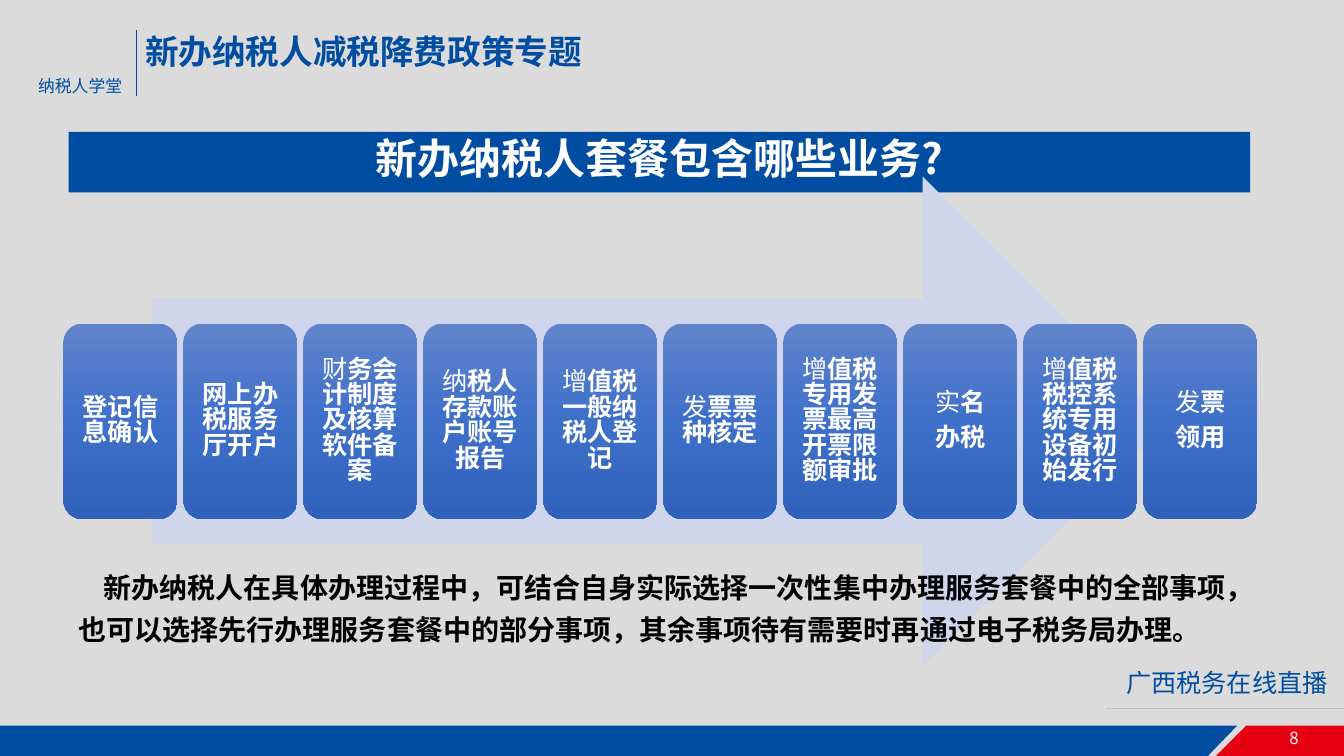
from copy import deepcopy

from lxml.etree import SubElement
from pptx import Presentation
from pptx.dml.color import RGBColor
from pptx.enum.shapes import MSO_CONNECTOR, MSO_SHAPE
from pptx.enum.text import MSO_ANCHOR, PP_ALIGN
from pptx.oxml.ns import qn
from pptx.util import Inches, Pt

COLORS = {
    "background": "DBDBDB",
    "blue": "004DA1",
    "red": "E60012",
    "rule": "BFBFBF",
    "arrow": "CFD5EA",
    "white": "FFFFFF",
    "black": "000000",
}
CARD_GRADIENT = [(0, "6183CB"), (0.5, "3E70CA"), (1, "3062BB")]

SERVICES = [
    [("", "登记信息确认")],
    [("", "网上办税服务厅开户")],
    [("财", "务会计制度及核算软件备案")],
    [("纳", "税人存款账户账号报告")],
    [("增", "值税一般纳税人登记")],
    [("发", "票票种核定")],
    [("增", "值税专用发票最高开票限额审批")],
    [("实", "名"), ("", "办税")],
    [("增", "值税税控系统专用设备初始发行")],
    [("发", "票"), ("", "领用")],
]
CARD_LEFT, CARD_PITCH = 0.63, 1.19


class SlideBuilder:
    font = "Noto Sans CJK SC"
    line_spacing = 0.84

    def __init__(self, presentation):
        self.slide = presentation.slides.add_slide(presentation.slide_layouts[6])
        self.shapes = self.slide.shapes
        background = self.slide.background.fill
        background.solid()
        background.fore_color.rgb = self.color("background")

    def color(self, name):
        return RGBColor.from_string(COLORS[name])

    def paint(self, shape, fill):
        shape.shadow.inherit = False
        shape.line.fill.background()
        shape.fill.solid()
        shape.fill.fore_color.rgb = self.color(fill)

    def polygon(self, points, fill):
        corners = [(Inches(x), Inches(y)) for x, y in points]
        outline = self.shapes.build_freeform(*corners[0])
        outline.add_line_segments(corners[1:], close=True)
        self.paint(outline.convert_to_shape(), fill)

    def preset(self, kind, box, fill):
        shape = self.shapes.add_shape(kind, *map(Inches, box))
        self.paint(shape, fill)
        return shape

    def rule(self, start, end, color):
        line = self.shapes.add_connector(
            MSO_CONNECTOR.STRAIGHT, *map(Inches, (*start, *end)))
        line.line.color.rgb = self.color(color)
        line.line.width = Pt(0.5)
        SubElement(line._element.spPr, qn("a:effectLst"))

    def fill_text(self, frame, paragraphs, size, color, align=PP_ALIGN.LEFT,
                  spacing=line_spacing, after=0, indent=0):
        frame.word_wrap = True
        for index, runs in enumerate(paragraphs):
            paragraph = frame.add_paragraph() if index else frame.paragraphs[0]
            paragraph.alignment = align
            paragraph.line_spacing = spacing
            paragraph.space_after = Pt(after)
            if indent:
                paragraph._p.get_or_add_pPr().set("indent", str(Inches(indent)))
            for text, bold in runs:
                run = paragraph.add_run()
                run.text = text
                run.font.size = Pt(size)
                run.font.bold = bold
                run.font.name = self.font
                run.font.color.rgb = self.color(color)
                east_asian = SubElement(run._r.get_or_add_rPr(), qn("a:ea"))
                east_asian.set("typeface", self.font)

    def text(self, box, text, size, color, bold=False, **style):
        frame = self.shapes.add_textbox(*map(Inches, box)).text_frame
        self.fill_text(frame, [[(text, bold)]], size, color, **style)

    def banner(self, box, text):
        frame = self.preset(MSO_SHAPE.RECTANGLE, box, "blue").text_frame
        frame.vertical_anchor = MSO_ANCHOR.MIDDLE
        self.fill_text(frame, [[(text, True)]], 30, "white", PP_ALIGN.CENTER)

    def card(self, left, lines):
        card = self.preset(
            MSO_SHAPE.ROUNDED_RECTANGLE, (left, 3.21, 1.13, 1.94), "blue")
        card.fill.gradient()
        card.fill.gradient_angle = 270
        first_stop = card.fill.gradient_stops[0]._gs
        first_stop.addnext(deepcopy(first_stop))
        for stop, (position, hex_color) in zip(card.fill.gradient_stops, CARD_GRADIENT):
            stop.position = position
            stop.color.rgb = RGBColor.from_string(hex_color)
        frame = card.text_frame
        frame.vertical_anchor = MSO_ANCHOR.MIDDLE
        frame.margin_left = frame.margin_right = Inches(0.12)
        frame.margin_top = frame.margin_bottom = Inches(0.12)
        paragraphs = [
            [(text, bold) for text, bold in ((light, False), (strong, True)) if text]
            for light, strong in lines
        ]
        self.fill_text(frame, paragraphs, 18, "white", PP_ALIGN.CENTER, after=6.3)


def main():
    presentation = Presentation()
    presentation.slide_width = Inches(13.33)
    presentation.slide_height = Inches(7.5)
    page = SlideBuilder(presentation)

    page.polygon([(0, 7.2), (12.27, 7.2), (11.98, 7.5), (0, 7.5)], "blue")
    page.polygon([(12.36, 7.2), (13.33, 7.2), (13.33, 7.5), (12.06, 7.5)], "red")
    page.text((12.69, 7.2, 0.54, 0.3), "8", 12, "white")
    page.rule((1.35, 0.3), (1.35, 0.95), "blue")
    page.rule((10.97, 7.03), (13.33, 7.03), "rule")
    page.text((0.28, 0.73, 1.08, 0.3), "纳税人学堂", 12, "blue")
    page.text((11.07, 6.62, 2.26, 0.4), "广西税务在线直播", 18, "blue")

    page.banner((0.68, 1.31, 11.72, 0.6), "新办纳税人套餐包含哪些业务?")
    page.text((1.34, 0.32, 7.52, 0.5), "新办纳税人减税降费政策专题", 24, "blue", bold=True)

    page.preset(MSO_SHAPE.RIGHT_ARROW, (1.51, 1.75, 10.07, 4.86), "arrow")
    for index, lines in enumerate(SERVICES):
        page.card(CARD_LEFT + index * CARD_PITCH, lines)

    page.text(
        (0.68, 5.53, 11.72, 1.45),
        "新办纳税人在具体办理过程中，可结合自身实际选择一次性集中办理服务套餐中的全部事项，"
        "也可以选择先行办理服务套餐中的部分事项，其余事项待有需要时再通过电子税务局办理。",
        20, "black", bold=True, spacing=1.25, indent=0.25)

    presentation.save("out.pptx")


if __name__ == "__main__":
    main()
